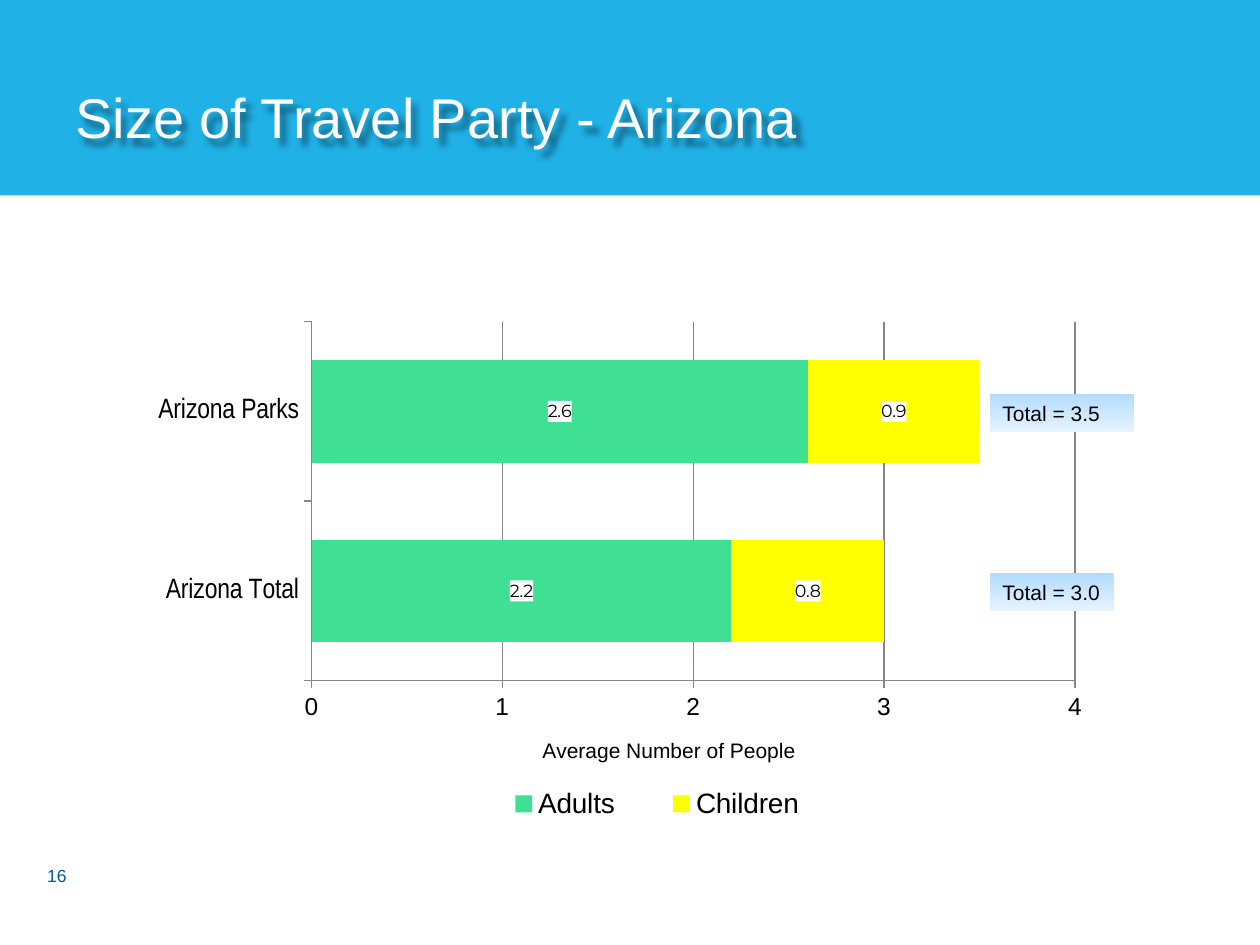
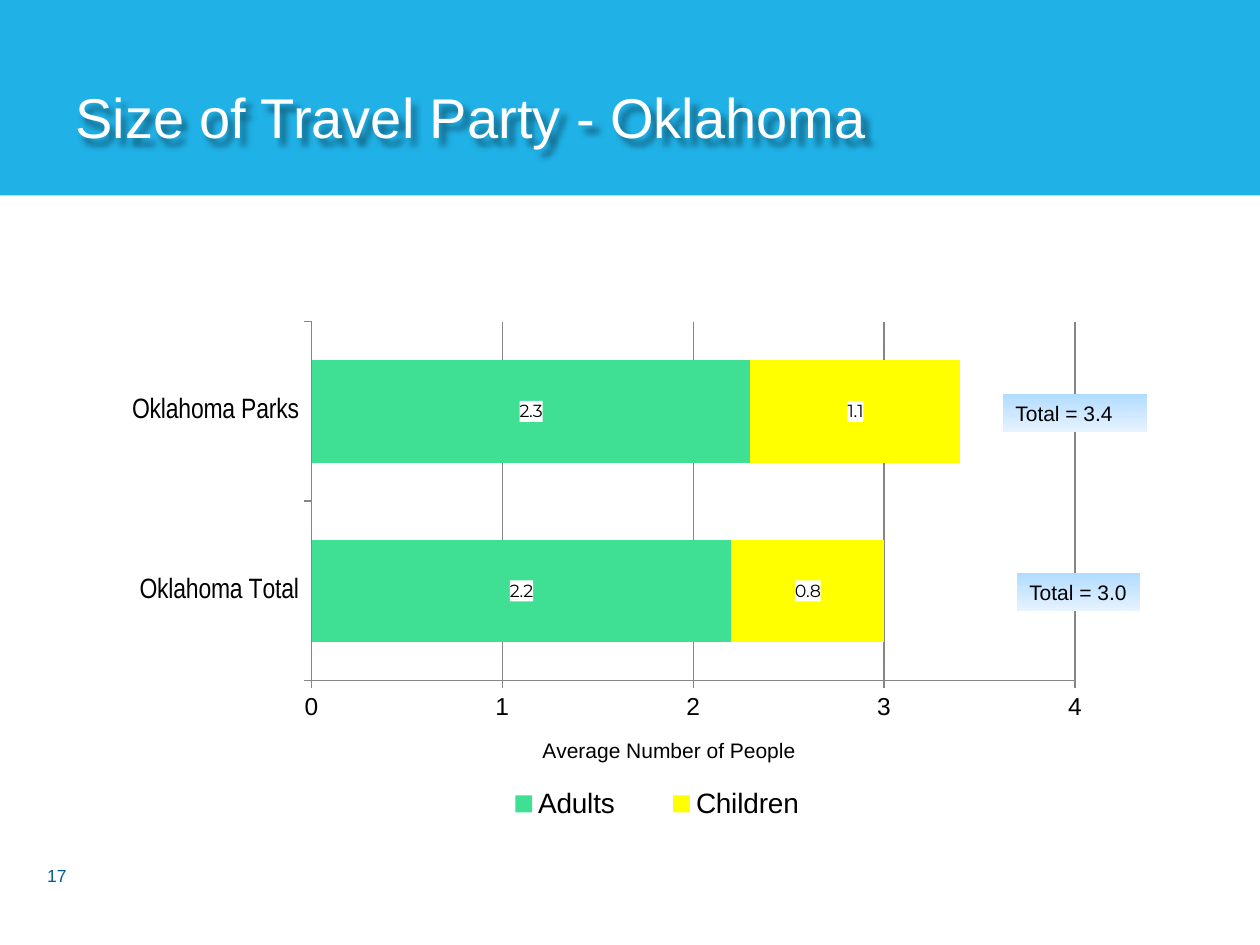
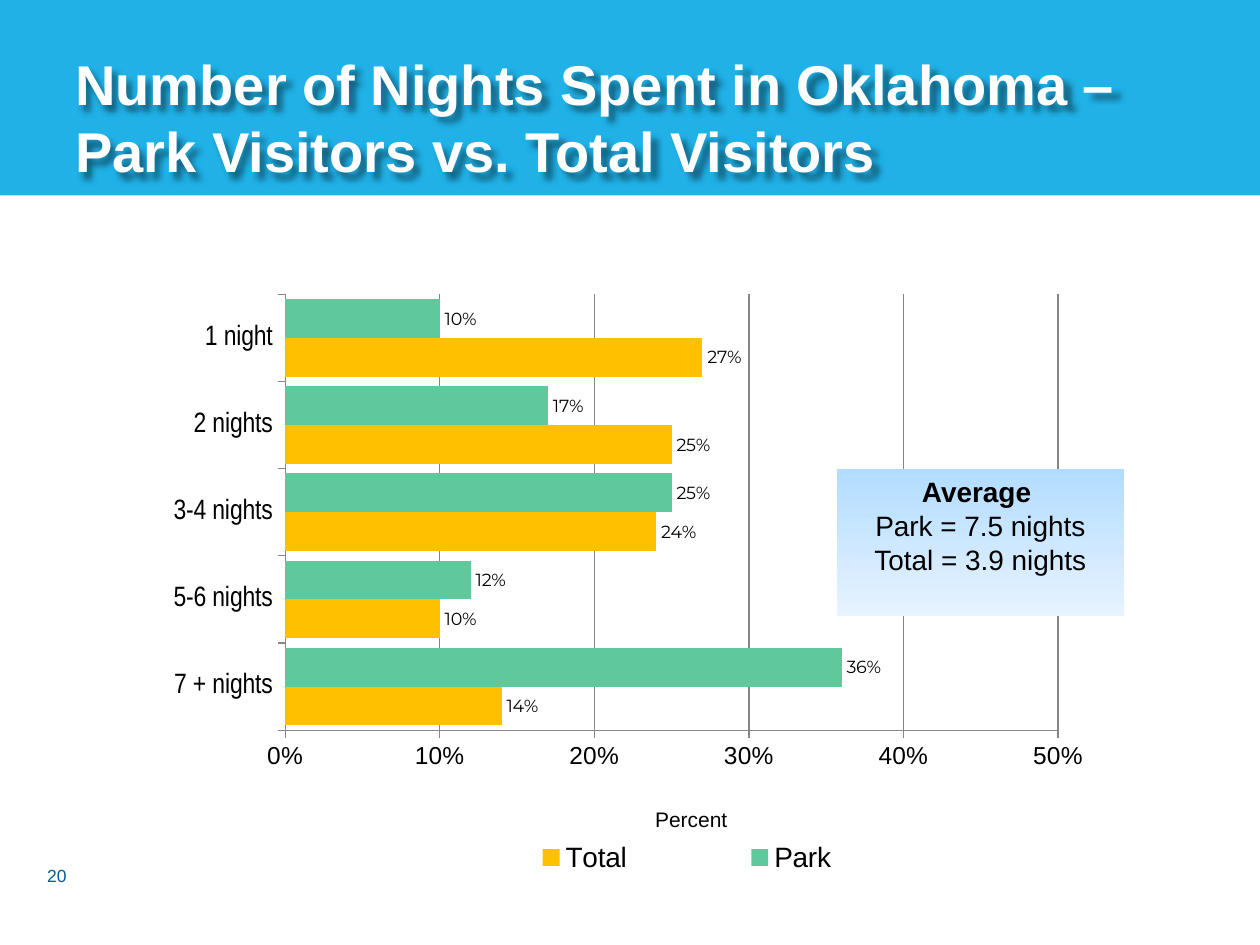
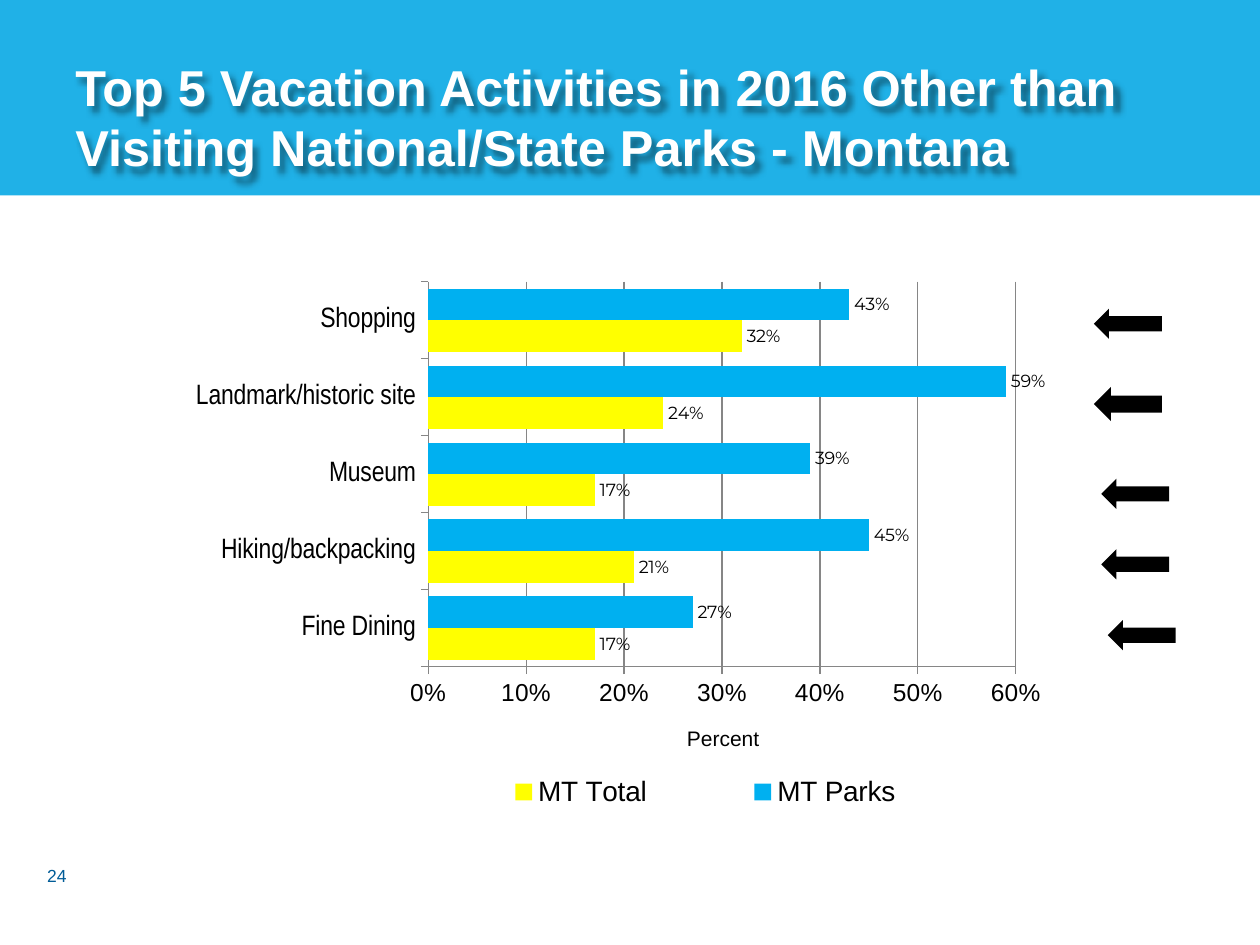
"""Build four slides of travel party, nights and activities bar charts."""
import dataclasses

import pptx
import pptx.chart.data
import pptx.dml.color
import pptx.enum.chart
import pptx.enum.shapes
import pptx.enum.text
import pptx.oxml
import pptx.oxml.ns
import pptx.util

Cm = pptx.util.Cm
Align = pptx.enum.text.PP_ALIGN
Autosize = pptx.enum.text.MSO_AUTO_SIZE
ChartType = pptx.enum.chart.XL_CHART_TYPE
ShapeType = pptx.enum.shapes.MSO_SHAPE
qn = pptx.oxml.ns.qn


@dataclasses.dataclass(frozen=True)
class Theme:
    band: str = "20B1E7"
    white: str = "FFFFFF"
    black: str = "000000"
    page: str = "005C97"
    grid: str = "868686"
    note_top: str = "B2DCFF"
    note_bottom: str = "E7F3FF"
    green: str = "40E094"
    yellow: str = "FFFF00"
    teal: str = "60C99C"
    amber: str = "FFC000"
    blue: str = "00B0F0"
    font: str = "Arial"
    narrow_font: str = "Arial Narrow"
    label_font: str = "Montserrat"
    title_size: float = 32
    long_title_size: float = 28.8
    chart_size: float = 18
    large: float = 16
    axis: float = 14
    small: float = 12
    tiny: float = 10


THEME = Theme()


def rgb(color):
    return pptx.dml.color.RGBColor.from_string(color)


def style(font, size, name=THEME.font, color=THEME.black, bold=False):
    font.size = pptx.util.Pt(size)
    font.name = name
    font.bold = bold
    font.color.rgb = rgb(color)


def write(frame, text, size, color=THEME.black, bold_lines=0, align=Align.LEFT):
    for index, line in enumerate(text.split("\n")):
        paragraph = frame.add_paragraph() if index else frame.paragraphs[0]
        paragraph.text = line
        paragraph.alignment = align
        for run in paragraph.runs:
            style(run.font, size, color=color, bold=index < bold_lines)


def xml(tag, content="", attributes=""):
    prefix = tag.split(":")[0]
    namespaces = pptx.oxml.ns.nsdecls(*{prefix, "a"})
    return pptx.oxml.parse_xml(f"<{tag} {namespaces} {attributes}>{content}</{tag}>")


def place(element, *fractions, inner=False):
    """Pin a chart part at x, y and, if given, width and height fractions."""
    for layout in element.findall(qn("c:layout")):
        element.remove(layout)
    content = '<c:layoutTarget val="inner"/>' if inner else ""
    content += '<c:xMode val="edge"/><c:yMode val="edge"/>'
    for tag, fraction in zip("xywh", fractions):
        content += f'<c:{tag} val="{fraction}"/>'
    layout = xml("c:layout", f"<c:manualLayout>{content}</c:manualLayout>")
    overlay = element.find(qn("c:overlay"))
    if overlay is None:
        element.insert(0, layout)
    else:
        overlay.addprevious(layout)


class Deck:
    """Holds the theme and the current slide, and draws each kind of element."""

    def __init__(self, theme):
        self.theme = theme
        self.presentation = pptx.Presentation()
        self.presentation.slide_width = Cm(25.4)
        self.presentation.slide_height = Cm(19.05)
        self.slide = None

    def start(self, title, number, size=THEME.title_size, bold=False):
        self.slide = self.presentation.slides.add_slide(self.presentation.slide_layouts[6])
        self.shape(ShapeType.RECTANGLE, 0, 0, 25.4, 3.94, self.theme.band)
        box = self.text(title, 1.27, 0.76, 22.86, 3.18, size=size,
                        color=self.theme.white, bold_lines=int(bold))
        box.text_frame.vertical_anchor = pptx.enum.text.MSO_ANCHOR.MIDDLE
        box.shadow.inherit = False
        effects = box._element.spPr.find(qn("a:effectLst"))
        effects.append(xml(
            "a:outerShdw",
            f'<a:srgbClr val="{self.theme.black}"><a:alpha val="43000"/></a:srgbClr>',
            'blurRad="50800" dist="50800" dir="2700000" algn="tl" rotWithShape="0"'))
        self.text(str(number), 0, 17.32, 2.29, 1.02, size=self.theme.tiny,
                  color=self.theme.page, align=Align.CENTER)

    def text(self, text, left, top, width, height, **formats):
        box = self.slide.shapes.add_textbox(Cm(left), Cm(top), Cm(width), Cm(height))
        box.text_frame.word_wrap = True
        write(box.text_frame, text, **formats)
        return box

    def shape(self, kind, left, top, width, height, color=None):
        shape = self.slide.shapes.add_shape(kind, Cm(left), Cm(top), Cm(width), Cm(height))
        shape.shadow.inherit = False
        shape.line.fill.background()
        if color:
            shape.fill.solid()
            shape.fill.fore_color.rgb = rgb(color)
        return shape

    def note(self, text, left, top, width, height, wrap=False, grow=True, **formats):
        shape = self.shape(ShapeType.RECTANGLE, left, top, width, height)
        shape.fill.gradient()
        shape.fill.gradient_angle = 270
        colors = (self.theme.note_top, self.theme.note_bottom)
        for stop, color in zip(shape.fill.gradient_stops, colors):
            stop.color.rgb = rgb(color)
        frame = shape.text_frame
        frame.word_wrap = wrap
        frame.auto_size = Autosize.SHAPE_TO_FIT_TEXT if grow else Autosize.NONE
        frame.vertical_anchor = pptx.enum.text.MSO_ANCHOR.TOP
        write(frame, text, **formats)

    def arrow(self, left, top, height):
        shape = self.shape(ShapeType.RIGHT_ARROW, left, top, 1.37, height, self.theme.black)
        shape.rotation = 180

    def chart(self, kind, area, categories, series, axis_title, maximum, step,
              gap, plot_at, title_at, legend_at, axis_format="General",
              label_format="0%", label_fill=None):
        data = pptx.chart.data.CategoryChartData()
        data.categories = categories
        for name, values, color in series:
            data.add_series(name, values)
        chart = self.slide.shapes.add_chart(kind, *map(Cm, area), data).chart
        chart.has_title = False
        style(chart.font, self.theme.chart_size, self.theme.label_font)

        plot = chart.plots[0]
        plot.gap_width = gap
        plot.overlap = 100 if kind == ChartType.BAR_STACKED else 0
        plot.vary_by_categories = False
        for bars, (name, values, color) in zip(plot.series, series):
            bars.invert_if_negative = False
            bars.format.fill.solid()
            bars.format.fill.fore_color.rgb = rgb(color)
            self.label(bars.data_labels, kind, label_format, label_fill)

        self.axes(chart, axis_title, maximum, step, axis_format)
        place(chart._chartSpace.chart.plotArea, *plot_at, inner=True)
        place(chart.value_axis.axis_title._element, *title_at)
        chart.has_legend = True
        chart.legend.position = pptx.enum.chart.XL_LEGEND_POSITION.BOTTOM
        chart.legend.include_in_layout = False
        style(chart.legend.font, self.theme.large)
        place(chart.legend._element, *legend_at)

    def label(self, labels, kind, number_format, fill):
        position = pptx.enum.chart.XL_LABEL_POSITION
        labels.show_value = True
        labels.number_format = number_format
        labels.number_format_is_linked = False
        labels.position = (position.CENTER if kind == ChartType.BAR_STACKED
                           else position.OUTSIDE_END)
        style(labels.font, self.theme.tiny, self.theme.label_font)
        if fill:
            properties = xml("c:spPr", f'<a:solidFill><a:srgbClr val="{fill}"/></a:solidFill>')
            labels._element.find(qn("c:txPr")).addprevious(properties)

    def axes(self, chart, title, maximum, step, number_format):
        category, value = chart.category_axis, chart.value_axis
        category.reverse_order = True
        value._element.find(qn("c:crosses")).set("val", "max")
        value.minimum_scale = 0
        value.maximum_scale = maximum
        value.major_unit = step
        value.has_major_gridlines = True
        for axis in (category, value):
            axis.major_tick_mark = pptx.enum.chart.XL_TICK_MARK.OUTSIDE
            axis.minor_tick_mark = pptx.enum.chart.XL_TICK_MARK.NONE
        for line in (category.format.line, value.format.line,
                     value.major_gridlines.format.line):
            line.color.rgb = rgb(self.theme.grid)
            line.width = pptx.util.Pt(0.75)
        style(category.tick_labels.font, self.theme.large, self.theme.narrow_font)
        style(value.tick_labels.font, self.theme.axis)
        value.tick_labels.number_format = number_format
        value.tick_labels.number_format_is_linked = False
        write(value.axis_title.text_frame, title, self.theme.small)


def travel_party(deck, state, number, adults, children, totals):
    theme = deck.theme
    deck.start(f"Size of Travel Party - {state}", number)
    deck.chart(
        ChartType.BAR_STACKED, (2.12, 6.27, 20.8, 10.8),
        [f"{state} Parks", f"{state} Total"],
        [("Adults", adults, theme.green), ("Children", children, theme.yellow)],
        "Average Number of People", maximum=4, step=1, gap=75,
        plot_at=(0.2, 0.02, 0.74, 0.67), title_at=(0.42, 0.79),
        legend_at=(0.35, 0.87, 0.37, 0.1),
        label_format="#,##0.0", label_fill=theme.white)
    (park_total, park_left), (state_total, state_left) = totals
    deck.note(f"Total = {park_total}", park_left, 7.95, 2.9, 0.76,
              wrap=True, size=theme.small)
    deck.note(f"Total = {state_total}", state_left, 11.56, 2.49, 0.76, size=theme.small)


def nights_spent(deck):
    theme = deck.theme
    deck.start("Number of Nights Spent in Oklahoma – \vPark Visitors vs. Total Visitors",
               20, bold=True)
    deck.chart(
        ChartType.BAR_CLUSTERED, (2.06, 5.92, 20.5, 12.22),
        ["1 night", "2 nights", "3-4 nights", "5-6 nights", "7 + nights"],
        [("Park", (0.1, 0.17, 0.25, 0.12, 0.36), theme.teal),
         ("Total", (0.27, 0.25, 0.24, 0.1, 0.14), theme.amber)],
        "Percent", maximum=0.5, step=0.1, gap=25, axis_format="0%",
        plot_at=(0.18, 0, 0.76, 0.72), title_at=(0.54, 0.84),
        legend_at=(0.32, 0.89, 0.51, 0.08))
    deck.note("Average \nPark = 7.5 nights\nTotal = 3.9 nights",
              16.87, 9.45, 5.79, 2.97, grow=False,
              size=theme.large, bold_lines=1, align=Align.CENTER)


def vacation_activities(deck):
    theme = deck.theme
    deck.start("Top 5 Vacation Activities in 2016 Other than "
               "Visiting National/State Parks - Montana",
               24, size=theme.long_title_size, bold=True)
    deck.chart(
        ChartType.BAR_CLUSTERED, (-0.53, 4.2, 22.35, 12.32),
        ["Shopping", "Landmark/historic site", "Museum", "Hiking/backpacking",
         "Fine Dining"],
        [("MT Parks", (0.43, 0.59, 0.39, 0.45, 0.27), theme.blue),
         ("MT Total", (0.32, 0.24, 0.17, 0.21, 0.17), theme.yellow)],
        "Percent", maximum=0.6, step=0.1, gap=44, axis_format="0%",
        plot_at=(0.41, 0.12, 0.53, 0.63), title_at=(0.64, 0.84),
        legend_at=(0.4, 0.91, 0.52, 0.09))
    for left, top, height in ((22.05, 6.22, 0.61), (22.05, 7.8, 0.69),
                              (22.2, 9.65, 0.61), (22.2, 11.07, 0.61),
                              (22.33, 12.5, 0.61)):
        deck.arrow(left, top, height)


def main():
    deck = Deck(THEME)
    travel_party(deck, "Arizona", 16, (2.6, 2.2), (0.9, 0.8),
                 (("3.5", 19.96), ("3.0", 19.96)))
    travel_party(deck, "Oklahoma", 17, (2.3, 2.2), (1.1, 0.8),
                 (("3.4", 20.22), ("3.0", 20.5)))
    nights_spent(deck)
    vacation_activities(deck)
    deck.presentation.save("out.pptx")


if __name__ == "__main__":
    main()
